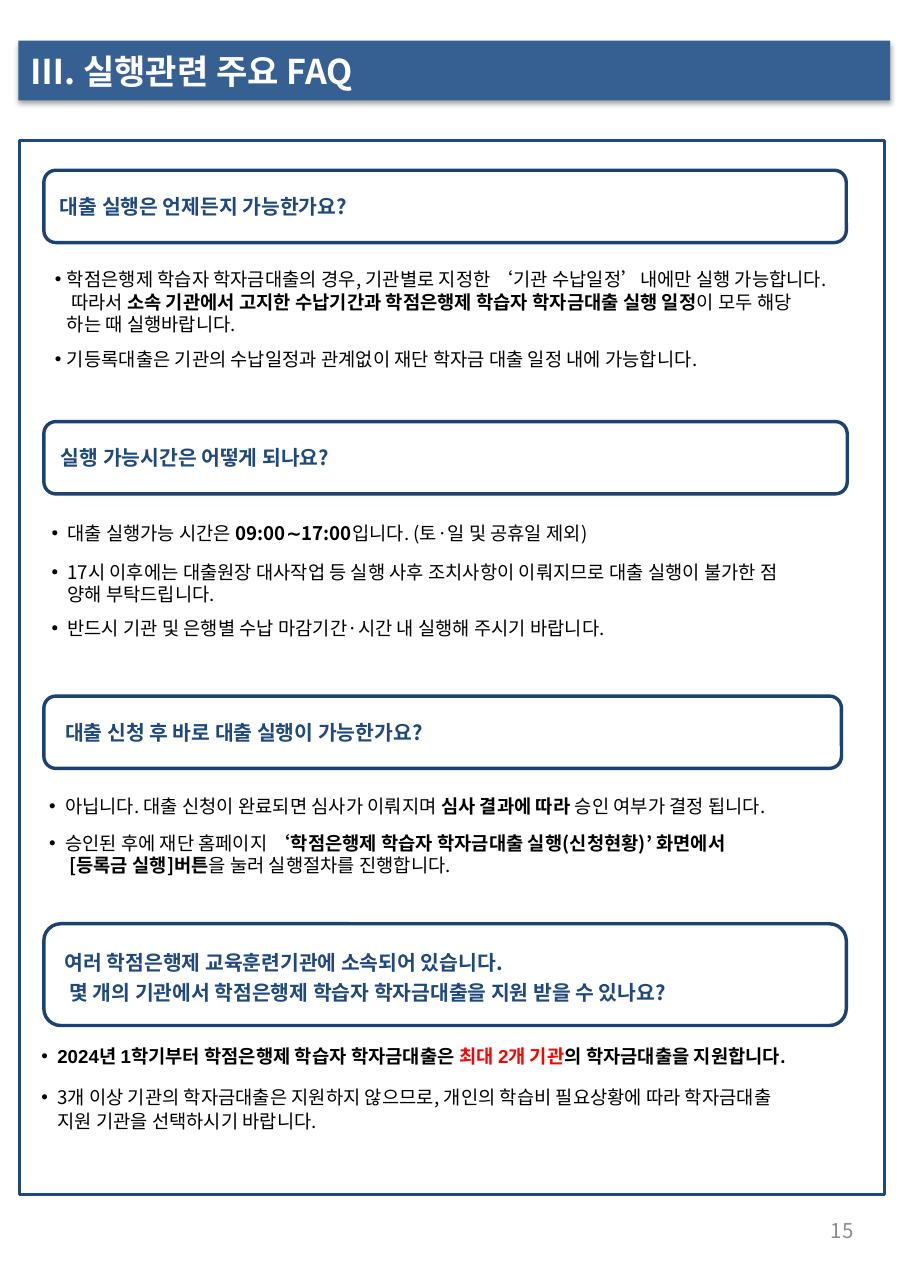
from dataclasses import dataclass
from typing import NamedTuple

from lxml import etree
from pptx import Presentation
from pptx.dml.color import RGBColor
from pptx.enum.shapes import MSO_SHAPE
from pptx.enum.text import MSO_ANCHOR, MSO_AUTO_SIZE, PP_ALIGN
from pptx.oxml.ns import qn
from pptx.util import Cm, Pt

RECT, ROUNDED = MSO_SHAPE.RECTANGLE, MSO_SHAPE.ROUNDED_RECTANGLE
MIDDLE, TOP = MSO_ANCHOR.MIDDLE, MSO_ANCHOR.TOP
LEFT, RIGHT = PP_ALIGN.LEFT, PP_ALIGN.RIGHT
NO_AUTOFIT = MSO_AUTO_SIZE.NONE
SANS, ARIAL = "Noto Sans CJK KR", "Arial"
BAR, NAVY, BORDER = "376092", "1F497D", "1C4271"
WHITE, BLACK, RED, GREY = "FFFFFF", "000000", "FF0000", "8C8C8C"
TEXT_RIGHT = 18.16
QUESTION_LEFT = 0.91


class Run(NamedTuple):
    text: str
    bold: bool = False
    color: str = BLACK
    size: float = 11
    font: str = SANS


@dataclass
class Para:
    runs: list[Run]
    before: float = 0
    indent: float = 0


@dataclass
class Faq:
    top: float
    width: float
    height: float
    inset: float
    question: list[Para]
    answer_left: float
    answer_top: float
    answer_height: float
    hang: float
    answers: list[Para]
    answer_spacing: float = 1.0


def rgb(value: str) -> RGBColor:
    return RGBColor.from_string(value)


def apply(obj, values: dict) -> None:
    for name, value in values.items():
        setattr(obj, name, value)


def box(left: float, top: float, width: float, height: float) -> list:
    return [Cm(v) for v in (left, top, width, height)]


def frame_text(tf, inset: float = 0, anchor=MIDDLE) -> None:
    apply(tf, dict(word_wrap=True, auto_size=NO_AUTOFIT, vertical_anchor=anchor,
                   margin_left=Cm(inset), margin_right=Cm(inset), margin_top=0, margin_bottom=0))


def add_run(p, run: Run) -> None:
    for i, line in enumerate(run.text.split("\n")):
        if i:
            p.add_line_break()
        if not line:
            continue
        r = p.add_run()
        r.text = line
        apply(r.font, dict(name=run.font, size=Pt(run.size), bold=run.bold))
        r.font.color.rgb = rgb(run.color)
        r.font._element.find(qn("a:latin")).addnext(
            etree.Element(qn("a:ea"), {"typeface": SANS}))


def add_bullet(p, hang: float) -> None:
    pPr = p._p.get_or_add_pPr()
    pPr.set("marL", str(Cm(hang)))
    pPr.set("indent", str(-Cm(hang)))
    etree.SubElement(pPr, qn("a:buFont"), {"typeface": ARIAL})
    etree.SubElement(pPr, qn("a:buChar"), {"char": "•"})


def fill_text(tf, paras: list[Para], spacing: float = 1.0, hang: float = 0, align=LEFT) -> None:
    for i, para in enumerate(paras):
        p = tf.add_paragraph() if i else tf.paragraphs[0]
        if hang:
            add_bullet(p, hang)
        elif para.indent:
            p._p.get_or_add_pPr().set("marL", str(Cm(para.indent)))
        apply(p, dict(alignment=align, line_spacing=spacing, space_before=Pt(para.before)))
        for run in para.runs:
            add_run(p, run)


def add_outline(s, kind, bounds: list, color: str, width: float):
    sp = s.shapes.add_shape(kind, *bounds)
    sp.shadow.inherit = False
    sp.fill.background()
    sp.line.color.rgb = rgb(color)
    sp.line.width = Pt(width)
    return sp


def add_title(s) -> None:
    sp = s.shapes.title
    bounds = box(0.38, 0.84, 18.08, 1.24)
    apply(sp, dict(zip(("left", "top", "width", "height"), bounds)))
    sp.fill.solid()
    sp.fill.fore_color.rgb = rgb(BAR)
    effects = etree.SubElement(sp._element.spPr, qn("a:effectLst"))
    shadow = etree.SubElement(effects, qn("a:outerShdw"), {
        "blurRad": str(Pt(3.1)), "dist": str(Pt(1.8)), "dir": "5400000", "rotWithShape": "0"})
    color = etree.SubElement(shadow, qn("a:srgbClr"), {"val": BLACK})
    etree.SubElement(color, qn("a:alpha"), {"val": "35000"})
    frame_text(sp.text_frame, 0.25)
    fill_text(sp.text_frame, [Para([Run("Ⅲ. 실행관련 주요 FAQ", True, WHITE, 20)])])


def add_faq(s, faq: Faq) -> None:
    sp = add_outline(s, ROUNDED, box(QUESTION_LEFT, faq.top, faq.width, faq.height), BORDER, 2)
    sp.fill.solid()
    sp.fill.fore_color.rgb = rgb(WHITE)
    frame_text(sp.text_frame, faq.inset)
    fill_text(sp.text_frame, faq.question, 1.22 if len(faq.question) > 1 else 1.0)
    width = TEXT_RIGHT - faq.answer_left
    tf = s.shapes.add_textbox(
        *box(faq.answer_left, faq.answer_top, width, faq.answer_height)).text_frame
    frame_text(tf, anchor=TOP)
    fill_text(tf, faq.answers, faq.answer_spacing, faq.hang)


def question(text: str, indent: float = 0) -> Para:
    return Para([Run(text, True, NAVY, 12)], indent=indent)


FAQS = [
    Faq(3.53, 16.64, 1.5, 0.26, [question("대출 실행은 언제든지 가능한가요?")],
        1.14, 5.56, 2.6, 0.25, [
            Para([Run("학점은행제 학습자 학자금대출의 경우, 기관별로 지정한 ‘기관 수납일정’내에만 실행 가능합니다.\n 따라서 "),
                  Run("소속 기관에서 고지한 수납기간과 학점은행제 학습자 학자금대출 실행 일정", True),
                  Run("이 모두 해당\n하는 때 실행바랍니다.")]),
            Para([Run("기등록대출은 기관의 수납일정과 관계없이 재단 학자금 대출 일정 내에 가능합니다.")], 7)]),
    Faq(8.74, 16.66, 1.5, 0.28, [question("실행 가능시간은 어떻게 되나요?")],
        1.07, 10.82, 3.1, 0.33, [
            Para([Run("대출 실행가능 시간은 "), Run("09:00∼17:00", True),
                  Run("입니다. (토·일 및 공휴일 제외)")]),
            Para([Run("17시 이후에는 대출원장 대사작업 등 실행 사후 조치사항이 이뤄지므로 대출 실행이 불가한 점\n"
                      "양해 부탁드립니다.")], 9.4),
            Para([Run("반드시 기관 및 은행별 수납 마감기간·시간 내 실행해 주시기 바랍니다.")], 6.5)]),
    Faq(14.43, 16.54, 1.5, 0.37, [question("대출 신청 후 바로 대출 실행이 가능한가요?")],
        1.02, 16.48, 2.1, 0.33, [
            Para([Run("아닙니다. 대출 신청이 완료되면 심사가 이뤄지며 "), Run("심사 결과에 따라", True),
                  Run(" 승인 여부가 결정 됩니다.")]),
            Para([Run("승인된 후에 재단 홈페이지"),
                  Run(" ‘학점은행제 학습자 학자금대출 실행(신청현황)’ 화면에서\n [등록금 실행]버튼", True),
                  Run("을 눌러 실행절차를 진행합니다.")], 8.2)]),
    Faq(19.15, 16.64, 2.11, 0.33, [
        question("여러 학점은행제 교육훈련기관에 소속되어 있습니다."),
        question("몇 개의 기관에서 학점은행제 학습자 학자금대출을 지원 받을 수 있나요?", 0.1)],
        0.86, 21.62, 2.4, 0.33, [
            Para([Run("2024년 1학기부터 학점은행제 학습자 학자금대출은 ", True, font=ARIAL),
                  Run("최대 2개 기관", True, RED, font=ARIAL),
                  Run("의 학자금대출을 지원합니다.", True, font=ARIAL)]),
            Para([Run("3개 이상 기관의 학자금대출은 지원하지 않으므로, 개인의 학습비 필요상황에 따라 학자금대출\n"
                      "지원 기관을 선택하시기 바랍니다.")], 10)], 1.07),
]


def main() -> None:
    prs = Presentation()
    apply(prs, dict(slide_width=Cm(18.87), slide_height=Cm(26.7)))
    s = prs.slides.add_slide(prs.slide_layouts[5])
    add_title(s)
    add_outline(s, RECT, box(0.41, 2.92, 17.93, 21.84), NAVY, 1.75)
    for faq in FAQS:
        add_faq(s, faq)
    tf = s.shapes.add_textbox(*box(13.56, 24.79, 4.39, 1.42)).text_frame
    frame_text(tf, 0.25)
    fill_text(tf, [Para([Run("15", color=GREY, size=12)])], align=RIGHT)
    prs.save("out.pptx")


if __name__ == "__main__":
    main()
